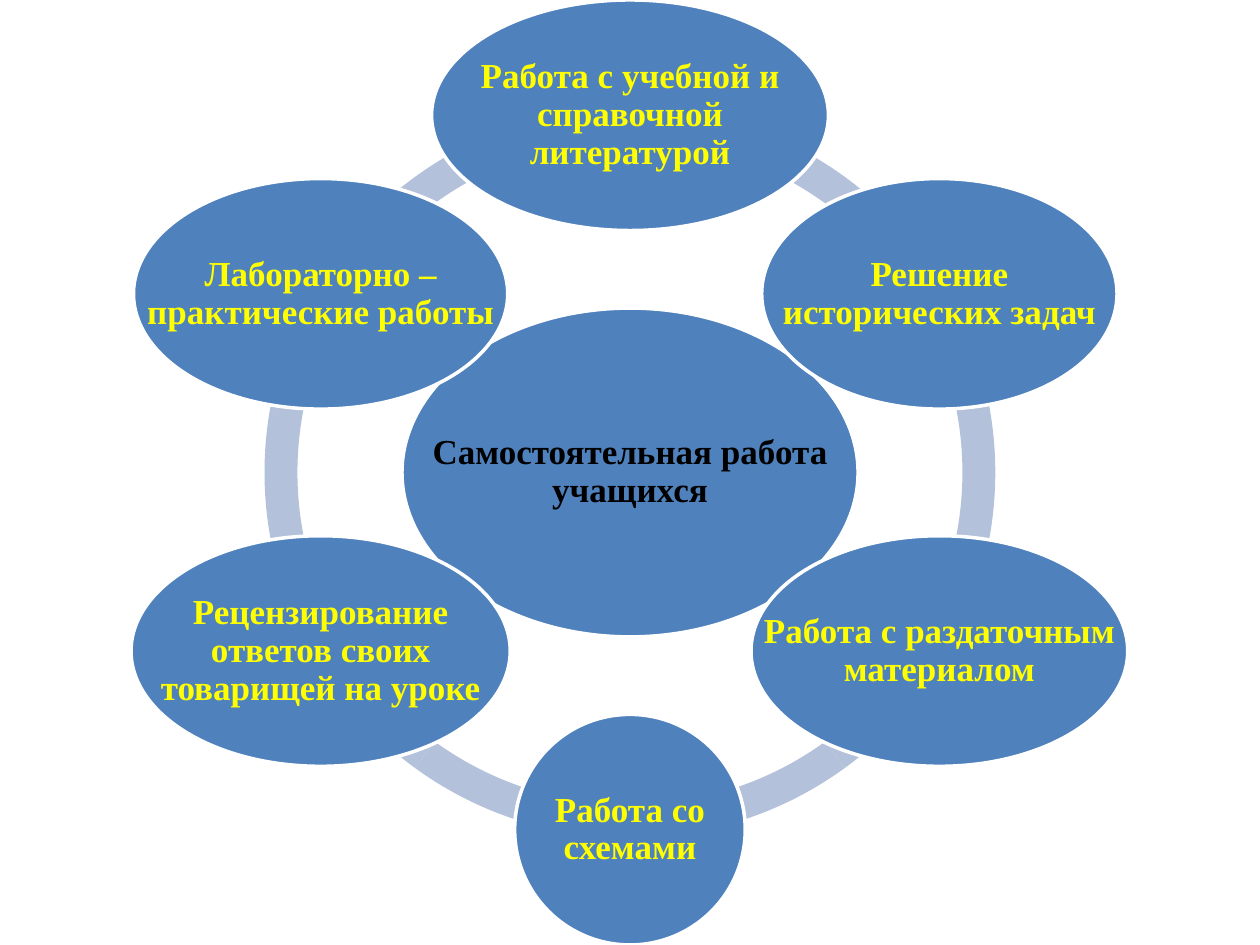
from math import cos, radians, sin

from pptx import Presentation
from pptx.dml.color import RGBColor
from pptx.enum.shapes import MSO_SHAPE
from pptx.enum.text import MSO_ANCHOR, PP_ALIGN
from pptx.util import Inches, Pt

BLOCK_ARC = MSO_SHAPE.BLOCK_ARC
OVAL = MSO_SHAPE.OVAL
MIDDLE = MSO_ANCHOR.MIDDLE
CENTER = PP_ALIGN.CENTER

BLUE = RGBColor(0x4F, 0x81, 0xBD)
PALE_BLUE = RGBColor(0xB3, 0xC1, 0xDB)
WHITE = RGBColor(0xFF, 0xFF, 0xFF)
BLACK = RGBColor(0x00, 0x00, 0x00)
YELLOW = RGBColor(0xFF, 0xFF, 0x00)

FONT = "Times New Roman"
CENTER_X, CENTER_Y = 5, 3.75
RING_SIZE = 5.8
RING_THICKNESS = 0.045
ORBIT_RADIUS = 2.835
TOPIC_HEIGHT = 1.83
ANGLE_UNIT = 0.6

ARCS = [(126, 162), (90, 126), (54, 90), (18, 54), (198, 18), (162, 198)]
TOPICS = [
    ("Работа с учебной и справочной литературой", 3.15),
    ("Решение исторических задач", 2.82),
    ("Работа с раздаточным материалом", 2.99),
    ("Работа со схемами", 1.83),
    ("Рецензирование ответов своих товарищей на уроке", 3.01),
    ("Лабораторно – практические работы", 2.97),
]


def centered_frame(x, y, width, height):
    """Return left, top, width and height of a frame centred on a point."""
    return (Inches(x - width / 2), Inches(y - height / 2),
            Inches(width), Inches(height))


def add_arc(page, start, end):
    """Add one segment of the ring, clockwise between two angles."""
    frame = centered_frame(CENTER_X, CENTER_Y, RING_SIZE, RING_SIZE)
    arc = page.shapes.add_shape(BLOCK_ARC, *frame)
    arc.adjustments[0] = start * ANGLE_UNIT
    arc.adjustments[1] = end * ANGLE_UNIT
    arc.adjustments[2] = RING_THICKNESS
    arc.shadow.inherit = False
    arc.fill.solid()
    arc.fill.fore_color.rgb = PALE_BLUE
    arc.line.fill.background()


def add_label(page, text, frame, color):
    """Add centred bold text spanning the whole frame."""
    box = page.shapes.add_textbox(*frame).text_frame
    box.word_wrap = True
    box.vertical_anchor = MIDDLE
    box.margin_left = box.margin_right = Inches(0.03)
    box.margin_top = box.margin_bottom = Inches(0.03)
    para = box.paragraphs[0]
    para.text = text
    para.alignment = CENTER
    para.line_spacing = 0.9
    para.space_after = Pt(7)
    para.font.name = FONT
    para.font.size = Pt(20)
    para.font.bold = True
    para.font.color.rgb = color


def add_bubble(page, text, frame, color):
    """Add a white-edged ellipse with its label."""
    bubble = page.shapes.add_shape(OVAL, *frame)
    bubble.shadow.inherit = False
    bubble.fill.solid()
    bubble.fill.fore_color.rgb = BLUE
    bubble.line.color.rgb = WHITE
    bubble.line.width = Pt(2)
    add_label(page, text, frame, color)


def add_topics(page):
    """Place the topics clockwise around the centre, starting at the top."""
    step = 360 / len(TOPICS)
    for index, (text, width) in enumerate(TOPICS):
        angle = radians(index * step)
        x = CENTER_X + ORBIT_RADIUS * sin(angle)
        y = CENTER_Y - ORBIT_RADIUS * cos(angle)
        add_bubble(page, text, centered_frame(x, y, width, TOPIC_HEIGHT), YELLOW)


def main():
    """Build the radial diagram and save the deck."""
    deck = Presentation()
    deck.slide_width = Inches(10)
    deck.slide_height = Inches(7.5)
    page = deck.slides.add_slide(deck.slide_layouts[6])
    for start, end in ARCS:
        add_arc(page, start, end)
    hub = centered_frame(CENTER_X, CENTER_Y, 3.62, 2.61)
    add_bubble(page, "Самостоятельная работа учащихся", hub, BLACK)
    add_topics(page)
    deck.save("out.pptx")


if __name__ == "__main__":
    main()
